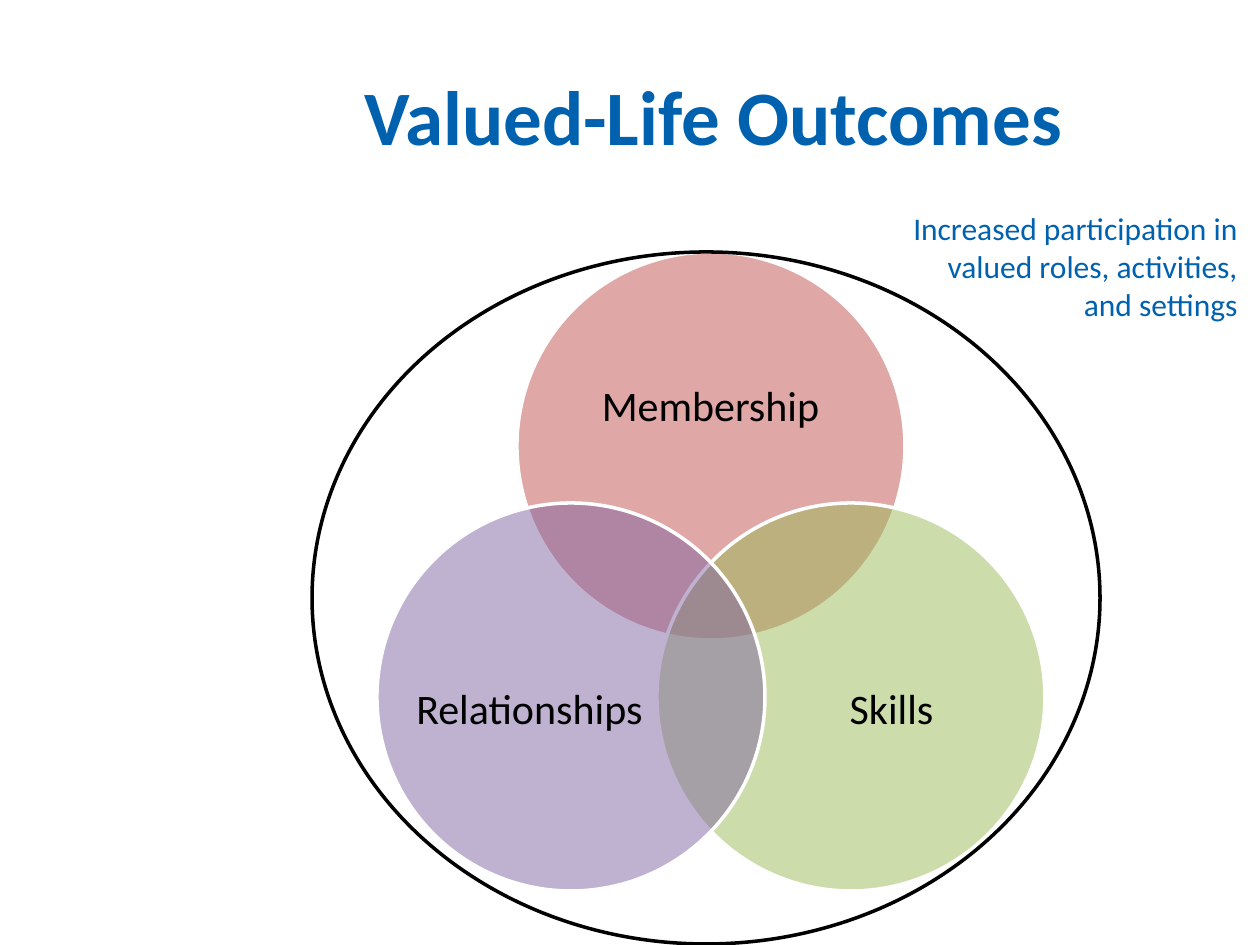
"""Build the Valued-Life Outcomes slide with its three-circle Venn diagram."""
from dataclasses import dataclass

from lxml import etree
from pptx import Presentation
from pptx import util as u
from pptx.dml.color import RGBColor
from pptx.enum import shapes, text
from pptx.oxml import ns


@dataclass(frozen=True)
class Theme:
    font: str = "Calibri"
    blue: str = "0061AF"
    black: str = "000000"
    white: str = "FFFFFF"
    red: str = "C0504D"
    green: str = "9BBB59"
    purple: str = "8064A2"
    title_size: int = 44
    label_size: int = 24
    note_size: int = 18
    line_width: int = 2
    opacity: int = 50


def px(length):
    return round(length * 914400 / 126)


def area(*lengths):
    return dict(zip(("left", "top", "width", "height"), map(px, lengths)))


def assign(target, values):
    for name, value in values.items():
        setattr(target, name, value)


class SlideBuilder:
    def __init__(self, theme, page):
        self.theme = theme
        self.page = page
        self.parent = page.shapes

    def start_group(self):
        self.parent = self.page.shapes.add_group_shape().shapes

    def end_group(self):
        self.parent = self.page.shapes

    def put_text(self, box, wording, size, color, align, bold=False, frame=None, spacing=None):
        assign(box.text_frame, {"word_wrap": True, **(frame or {})})
        para = box.text_frame.paragraphs[0]
        assign(para, {"alignment": align, "line_spacing": spacing})
        span = para.add_run()
        span.text = wording
        assign(span.font, {"name": self.theme.font, "size": u.Pt(size), "bold": bold})
        span.font.color.rgb = RGBColor.from_string(color)

    def title(self, wording, place):
        box = self.page.shapes.title
        assign(box, area(*place))
        self.put_text(box, wording, self.theme.title_size, self.theme.blue, text.PP_ALIGN.CENTER,
                      bold=True, frame={"vertical_anchor": text.MSO_ANCHOR.MIDDLE})

    def ellipse(self, place, line, fill=None):
        oval = self.parent.add_shape(shapes.MSO_SHAPE.OVAL, **area(*place))
        oval.shadow.inherit = False
        oval.line.color.rgb = RGBColor.from_string(line)
        oval.line.width = u.Pt(self.theme.line_width)
        if fill is None:
            oval.fill.background()
            return
        oval.fill.solid()
        oval.fill.fore_color.rgb = RGBColor.from_string(fill)
        color = oval._element.spPr.find(ns.qn("a:solidFill"))[0]
        etree.SubElement(color, ns.qn("a:alpha"), val=str(self.theme.opacity * 1000))

    def label(self, wording, place):
        box = self.parent.add_textbox(**area(*place))
        frame = dict.fromkeys(("margin_left", "margin_top", "margin_right", "margin_bottom"), 0)
        frame["vertical_anchor"] = text.MSO_ANCHOR.MIDDLE
        self.put_text(box, wording, self.theme.label_size, self.theme.black,
                      text.PP_ALIGN.CENTER, frame=frame, spacing=0.9)

    def note(self, wording, place):
        box = self.parent.add_textbox(**area(*place))
        self.put_text(box, wording, self.theme.note_size, self.theme.blue, text.PP_ALIGN.RIGHT,
                      frame={"auto_size": text.MSO_AUTO_SIZE.SHAPE_TO_FIT_TEXT})


def main():
    theme = Theme()
    deck = Presentation()
    assign(deck, {"slide_width": u.Inches(10), "slide_height": u.Inches(7.5)})
    slide = SlideBuilder(theme, deck.slides.add_slide(deck.slide_layouts[5]))

    slide.title("Valued-Life Outcomes", (232, 42, 963, 146))

    center, top, diameter, shift, drop = 711, 252, 388, 140, 251
    circles = (
        ("Membership", theme.red, 0, 0, (568, 320, 285, 175)),
        ("Skills", theme.green, shift, drop, (775, 604, 233, 213)),
        ("Relationships", theme.purple, -shift, drop, (413, 604, 233, 213)),
    )
    slide.start_group()
    for wording, color, across, down, label_place in circles:
        left = center - diameter // 2 + across
        slide.ellipse((left, top + down, diameter, diameter), theme.white, color)
        slide.label(wording, label_place)
    slide.end_group()

    slide.ellipse((312, top, 788, 692), theme.black)
    slide.note("Increased participation in valued roles, activities, and settings",
               (881, 203, 369, 127))
    deck.save("out.pptx")


if __name__ == "__main__":
    main()
